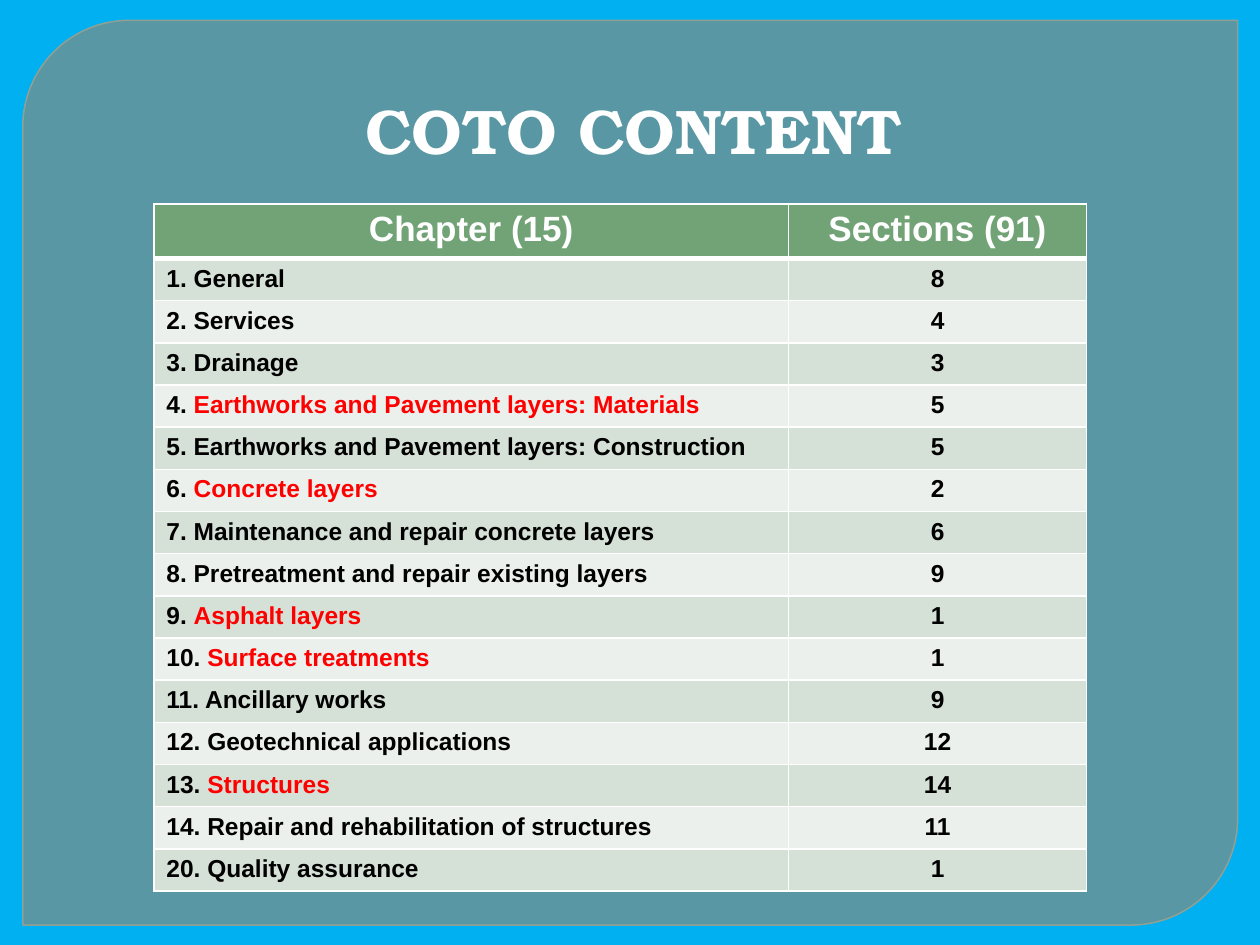
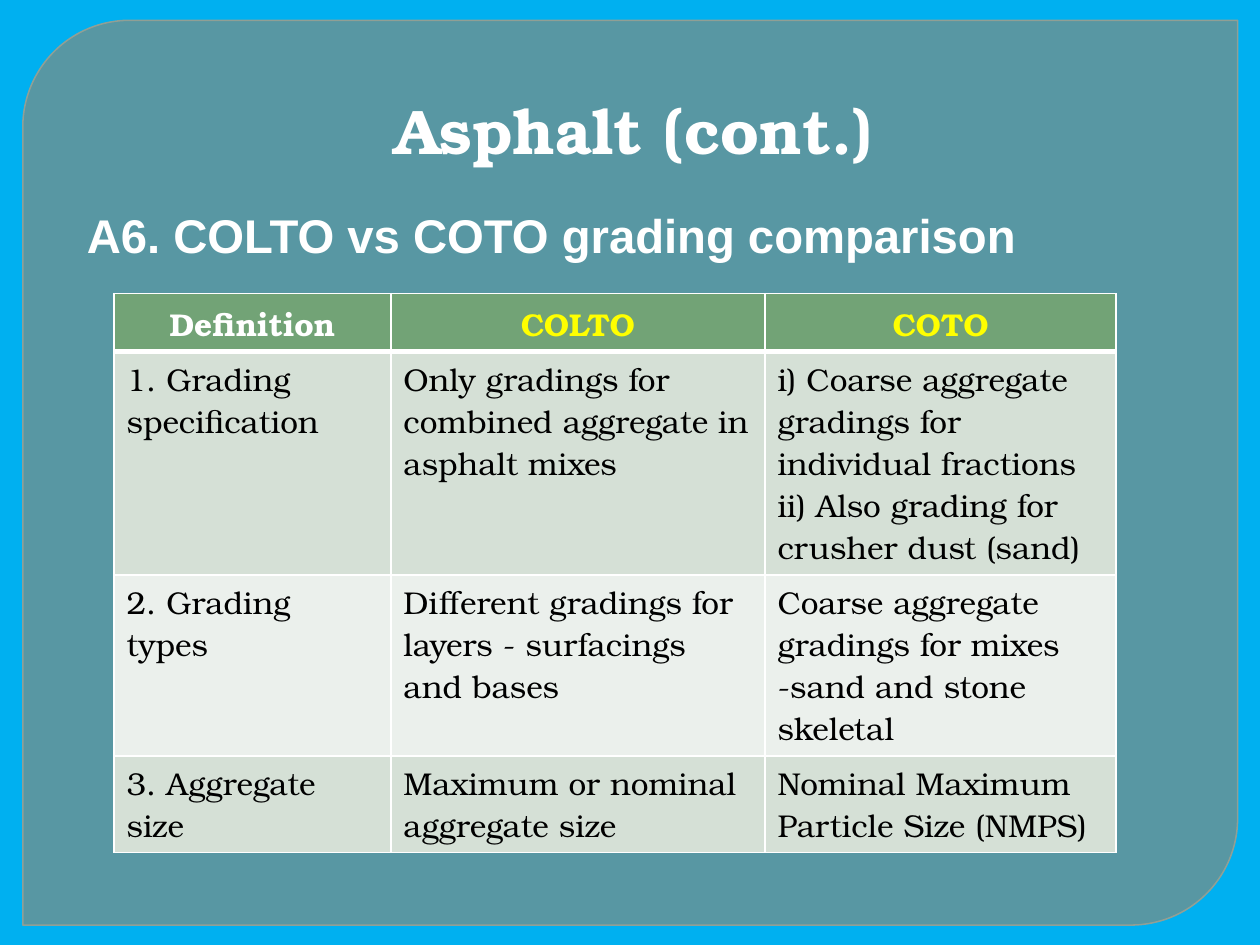
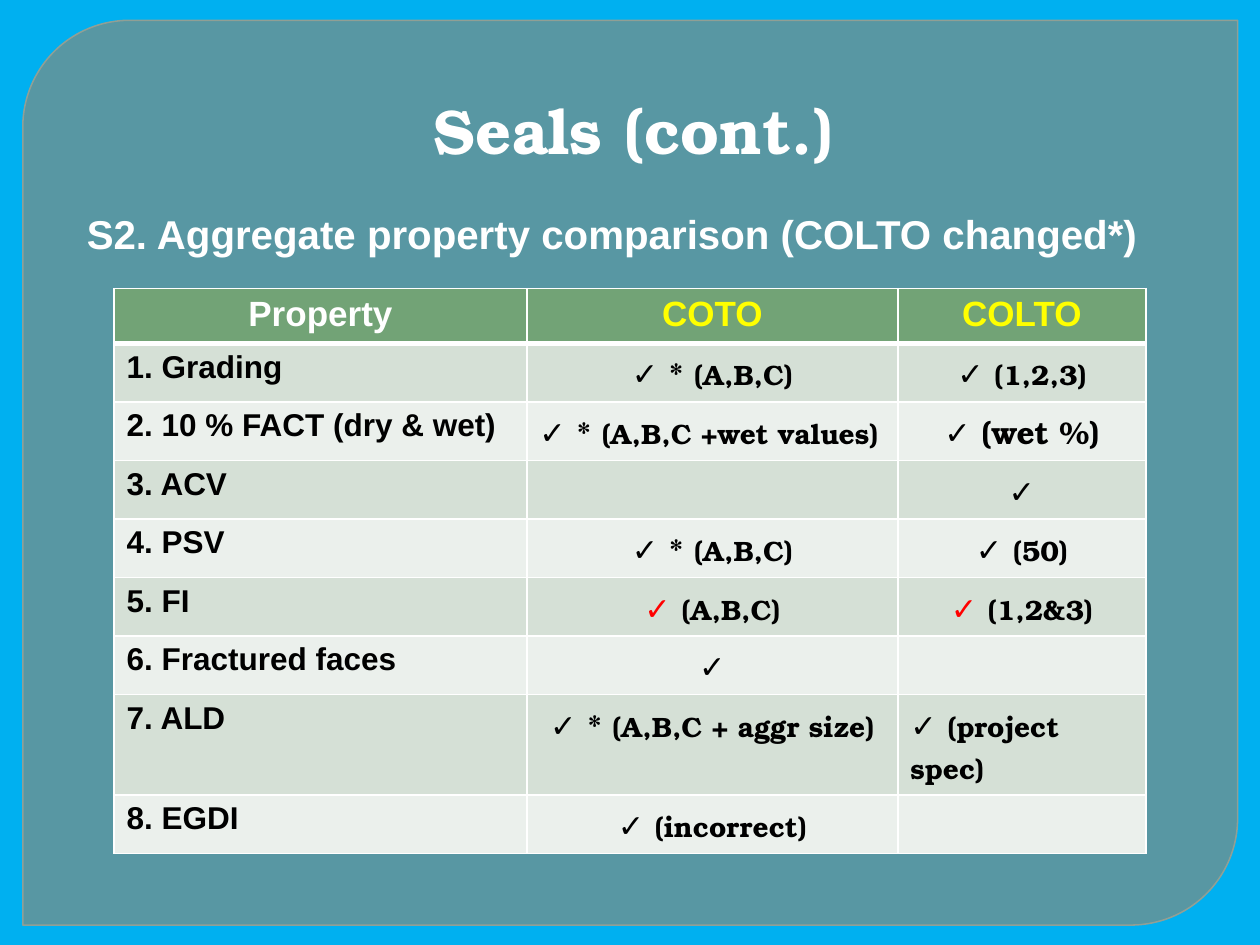
from lxml import etree
from pptx import Presentation
from pptx.dml.color import RGBColor
from pptx.enum import shapes, text
from pptx.oxml.ns import qn
from pptx.util import Cm, Pt

COLOURS = {
    "background": "00B0F0", "panel": "888B7B", "panel_line": "9DA090",
    "header": "72A376", "odd_row": "D5E0D6", "even_row": "EBF0EC",
    "white": "FFFFFF", "black": "000000", "red": "FF0000", "yellow": "FFFF00",
}
SANS, SERIF = "Arial", "TeX Gyre Bonum"
CENTRE = text.PP_ALIGN.CENTER


def add_run(paragraph, words, font, size, colour="black", bold=True):
    run = paragraph.add_run()
    run.text = words
    run.font.name, run.font.size, run.font.bold = font, Pt(size), bold
    run.font.color.rgb = RGBColor.from_string(COLOURS[colour])


def add_banded_table(slide, left, top, widths, heights, headings, font, size):
    """Add a ruled, banded table with its heading row; headings are (words, colour)."""
    table = slide.shapes.add_table(len(heights), len(widths), Cm(left), Cm(top),
                                   Cm(sum(widths)), Cm(sum(heights))).table
    table.horz_banding = False
    for column, width in zip(table.columns, widths):
        column.width = Cm(width)
    for index, (row, height) in enumerate(zip(table.rows, heights)):
        row.height = Cm(height)
        band = "header" if index == 0 else "odd_row" if index % 2 else "even_row"
        for cell in row.cells:
            for side in "LRTB":
                thick = (index, side) in ((0, "B"), (1, "T"))
                border = etree.SubElement(cell._tc.get_or_add_tcPr(), qn(f"a:ln{side}"),
                                          w=str(Pt(3 if thick else 1)))
                line_fill = etree.SubElement(border, qn("a:solidFill"))
                etree.SubElement(line_fill, qn("a:srgbClr"), val=COLOURS["white"])
            cell.fill.solid()
            cell.fill.fore_color.rgb = RGBColor.from_string(COLOURS[band])
    for cell, (words, colour) in zip(table.rows[0].cells, headings):
        heading = cell.text_frame.paragraphs[0]
        heading.alignment = CENTRE
        add_run(heading, words, font, size, colour)
    return table


prs = Presentation()
prs.slide_width, prs.slide_height = Cm(25.4), Cm(19.05)
layout = prs.slide_layouts[5]
backdrop = prs.slide_master.background.fill
backdrop.solid()
backdrop.fore_color.rgb = RGBColor.from_string(COLOURS["background"])

# Titles
slides = []
for words in ("COTO CONTENT", "Asphalt (cont.)", "Seals (cont.)"):
    slide = prs.slides.add_slide(layout)
    slides.append(slide)
    title = slide.shapes.title
    title.left, title.top, title.width, title.height = 0, 0, prs.slide_width, Cm(3.5)
    frame = title.text_frame
    frame.margin_left = Cm(0.4)
    frame.vertical_anchor = text.MSO_ANCHOR.BOTTOM
    frame.auto_size = text.MSO_AUTO_SIZE.NONE
    frame.paragraphs[0].alignment = CENTRE
    add_run(frame.paragraphs[0], words, SERIF, 36, "white")
contents, asphalt, seals = slides

# Panel, moved into the layout so that every slide shows it
panel = contents.shapes.add_shape(shapes.MSO_SHAPE.ROUND_2_DIAG_RECTANGLE,
                                  Cm(0.46), Cm(0.41), Cm(24.49), Cm(18.24))
panel.shadow.inherit = False
panel.adjustments[0], panel.adjustments[1] = 0.118, 0
panel.fill.solid()
panel.fill.fore_color.rgb = RGBColor.from_string(COLOURS["panel"])
panel.line.color.rgb = RGBColor.from_string(COLOURS["panel_line"])
panel.line.width = Pt(0.87)
panel_colours = list(panel._element.spPr.iter(qn("a:srgbClr")))
for colour, opacity in zip(panel_colours, (65, 88)):
    etree.SubElement(colour, qn("a:alpha"), val=str(opacity * 1000))
layout.shapes._spTree.insert(2, panel._element)

# Subtitles
for slide, words, size, top, height, inset, spacing in (
    (asphalt, "A6. COLTO vs COTO grading comparison", 27, 4.15, 1.4, 0, 1),
    (seals, "S2. Aggregate property comparison (COLTO changed*)", 23, 3.99, 1.75, 0.13, 1.1),
):
    subtitle = slide.shapes.add_textbox(0, Cm(top), prs.slide_width, Cm(height)).text_frame
    subtitle.word_wrap = True
    subtitle.margin_left = subtitle.margin_right = Cm(1.75)
    subtitle.margin_top = subtitle.margin_bottom = Cm(inset)
    subtitle.paragraphs[0].line_spacing = spacing
    add_run(subtitle.paragraphs[0], words, SANS, size, "white")

# Chapters and their number of sections
chapters = [
    ("1. ", "General", 8),
    ("2. ", "Services", 4),
    ("3. ", "Drainage", 3),
    ("4. ", "Earthworks and Pavement layers: Materials", 5),
    ("5. ", "Earthworks and Pavement layers: Construction", 5),
    ("6. ", "Concrete layers", 2),
    ("7. ", "Maintenance and repair concrete layers", 6),
    ("8. ", "Pretreatment and repair existing layers", 9),
    ("9. ", "Asphalt layers", 1),
    ("10. ", "Surface treatments", 1),
    ("11. ", "Ancillary works", 9),
    ("12. ", "Geotechnical applications", 12),
    ("13. ", "Structures", 14),
    ("14. ", "Repair and rehabilitation of structures", 11),
    ("20. ", "Quality assurance", 1),
]
highlighted = {"4. ", "6. ", "9. ", "10. ", "13. "}
chapter_table = add_banded_table(
    contents, 3.1, 4.11, [12.8, 6], [1.1] + [0.85] * len(chapters),
    [("Chapter (15)", "white"), ("Sections (91)", "white")], SANS, 20)
for row, (number, name, sections) in enumerate(chapters, 1):
    chapter, count = (chapter_table.cell(row, col).text_frame.paragraphs[0] for col in (0, 1))
    if number in highlighted:
        add_run(chapter, number, SANS, 14)
        add_run(chapter, name, SANS, 14, "red")
    else:
        add_run(chapter, number + name, SANS, 14)
    count.alignment = CENTRE
    add_run(count, str(sections), SANS, 14)

# Grading comparison
gradings = [
    ("1. Grading specification",
     "Only gradings for combined aggregate in asphalt mixes",
     "i) Coarse aggregate gradings for individual fractions\n"
     "ii) Also grading for crusher dust (sand)"),
    ("2. Grading types",
     "Different gradings for layers - surfacings and bases",
     "Coarse aggregate gradings for mixes -sand and stone skeletal"),
    ("3. Aggregate size",
     "Maximum or nominal aggregate size",
     "Nominal Maximum Particle Size (NMPS)"),
]
grading_table = add_banded_table(
    asphalt, 2.3, 5.92, [5.58, 7.54, 7.08], [1.17, 4.5, 3.65, 1.95],
    [("Definition", "white"), ("COLTO", "yellow"), ("COTO", "yellow")], SERIF, 18)
for row, entries in enumerate(gradings, 1):
    for col, entry in enumerate(entries):
        frame = grading_table.cell(row, col).text_frame
        for index, words in enumerate(entry.split("\n")):
            paragraph = frame.add_paragraph() if index else frame.paragraphs[0]
            add_run(paragraph, words, SERIF, 18, bold=False)

# Aggregate properties: each entry is a tick and a smaller note
properties = [
    ("1. Grading", ("✓ * ", "(A,B,C)"), ("✓ ", "(1,2,3)")),
    ("2. 10 % FACT (dry & wet)", ("✓ * ", "(A,B,C +wet values)"), ("✓ (wet %)", "")),
    ("3. ACV", ("", ""), ("✓", "")),
    ("4. PSV", ("✓ * ", "(A,B,C)"), ("✓ ", "(50)")),
    ("5. FI", ("✓ ", "(A,B,C)"), ("✓ ", "(1,2&3)")),
    ("6. Fractured faces", ("✓", ""), ("", "")),
    ("7. ALD", ("✓ * ", "(A,B,C + aggr size)"), ("✓ ", "(project spec)")),
    ("8. EGDI", ("✓ ", "(incorrect)"), ("", "")),
]
left_aligned = {"(A,B,C +wet values)", "(project spec)"}
property_table = add_banded_table(
    seals, 2.3, 5.82, [8.32, 7.48, 5], [1.03] + [1.18] * 6 + [2.02, 1.18],
    [("Property", "white"), ("COTO", "yellow"), ("COLTO", "yellow")], SANS, 20)
for row, (name, *entries) in enumerate(properties, 1):
    add_run(property_table.cell(row, 0).text_frame.paragraphs[0], name, SANS, 18)
    for col, (tick, note) in enumerate(entries, 1):
        paragraph = property_table.cell(row, col).text_frame.paragraphs[0]
        if note not in left_aligned:
            paragraph.alignment = CENTRE
        if tick:
            add_run(paragraph, tick, SERIF, 18, "red" if name == "5. FI" else "black")
        if note:
            add_run(paragraph, note, SERIF, 16)

prs.save("out.pptx")
